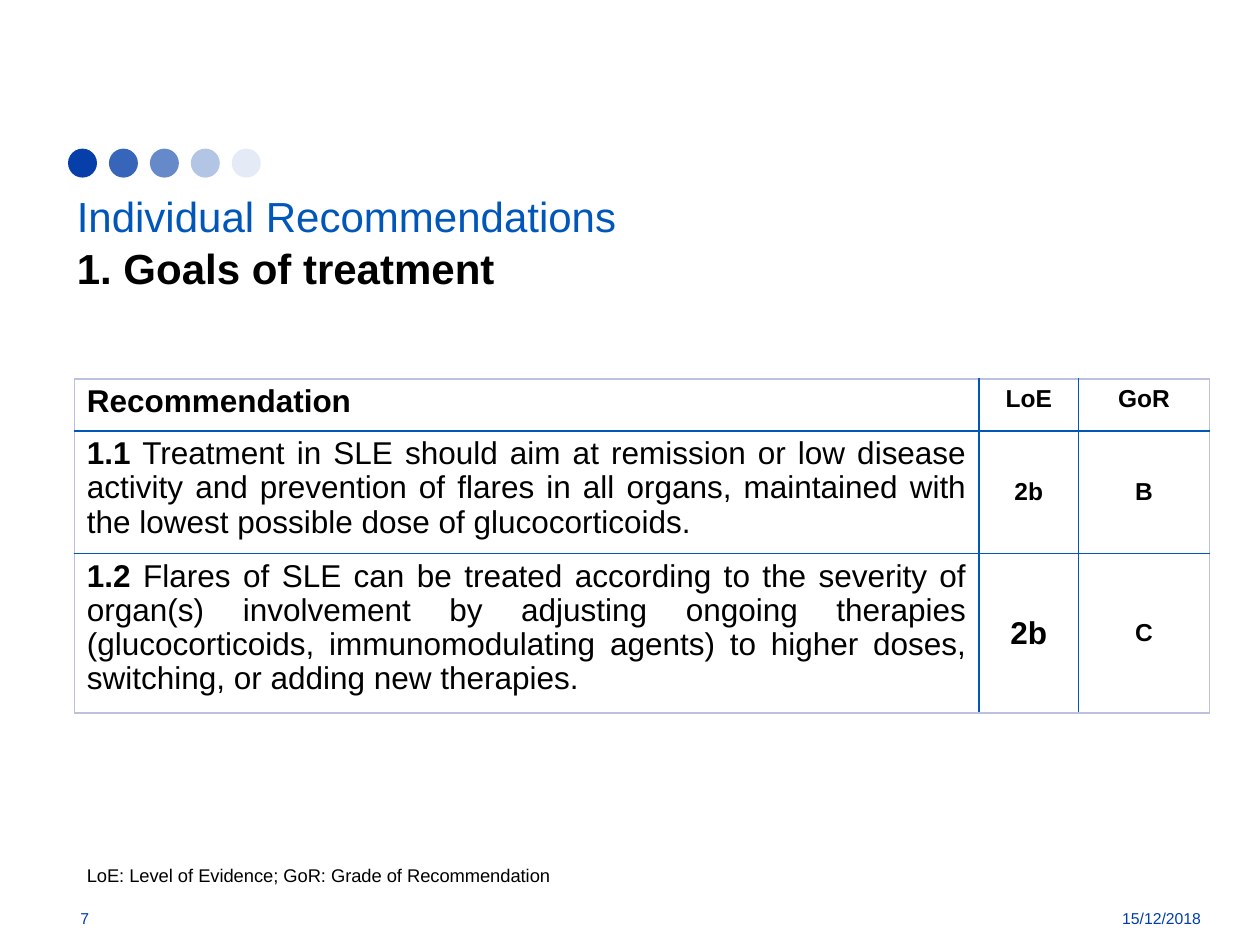
from lxml import etree
from pptx import Presentation
from pptx.dml.color import RGBColor
from pptx.enum.shapes import MSO_SHAPE
from pptx.enum.text import MSO_ANCHOR, PP_ALIGN
from pptx.oxml.ns import qn
from pptx.util import Inches, Pt

OVAL = MSO_SHAPE.OVAL
TOP, MIDDLE = MSO_ANCHOR.TOP, MSO_ANCHOR.MIDDLE
LEFT, CENTER, RIGHT = PP_ALIGN.LEFT, PP_ALIGN.CENTER, PP_ALIGN.RIGHT
JUSTIFY = PP_ALIGN.JUSTIFY

BLACK = RGBColor(0x00, 0x00, 0x00)
DOT_BLUE = RGBColor(0x06, 0x3F, 0xA9)
TITLE_BLUE = RGBColor(0x00, 0x56, 0xB9)
FOOTER_BLUE = RGBColor(0x00, 0x3F, 0xA8)
GRID_BLUE = RGBColor(0x00, 0x57, 0xB8)
EDGE_LAVENDER = RGBColor(0xBC, 0xC1, 0xDE)

FONT = "Arial"
DOT_OPACITIES = [100, 80, 61, 30, 10]
DOT_SIZE, DOT_PITCH = 0.23, 0.325
COLUMN_WIDTHS = [7.18, 0.79, 1.04]
ROW_HEIGHTS = [0.41, 0.94, 1.22]
ROWS = [
    [("Recommendation", ""), ("LoE", 14), ("GoR", 14)],
    [("1.1", " Treatment in SLE should aim at remission or low disease activity "
      "and prevention of flares in all organs, maintained with the lowest "
      "possible dose of glucocorticoids."), ("2b", 14), ("B", 14)],
    [("1.2", " Flares of SLE can be treated according to the severity of organ(s) "
      "involvement by adjusting ongoing therapies (glucocorticoids, "
      "immunomodulating agents) to higher doses, switching, or adding new "
      "therapies."), ("2b", 18), ("C", 14)],
]


def add_span(para, text, size, color=BLACK, bold=False):
    span = para.add_run()
    span.text = text
    span.font.name = FONT
    span.font.size = Pt(size)
    span.font.bold = bold
    span.font.color.rgb = color


def add_text(page, text, left, top, width, height, size, color=BLACK,
             align=LEFT, anchor=TOP, wrap=True):
    box = page.shapes.add_textbox(*map(Inches, (left, top, width, height)))
    frame = box.text_frame
    frame.word_wrap = wrap
    frame.vertical_anchor = anchor
    para = frame.paragraphs[0]
    para.alignment = align
    add_span(para, text, size, color)


def add_dots(page):
    for index, opacity in enumerate(DOT_OPACITIES):
        dot = page.shapes.add_shape(
            OVAL, Inches(0.54 + index * DOT_PITCH), Inches(1.18),
            Inches(DOT_SIZE), Inches(DOT_SIZE))
        dot.shadow.inherit = False
        dot.line.fill.background()
        dot.fill.solid()
        dot.fill.fore_color.rgb = DOT_BLUE
        if opacity < 100:
            color = dot.fill._xPr.find(qn("a:solidFill"))[0]
            etree.SubElement(color, qn("a:alpha"), val=str(opacity * 1000))


def format_title(page):
    title = page.shapes.title
    title.left, title.top = Inches(0.51), Inches(1.42)
    title.width, title.height = Inches(9.11), Inches(0.69)
    frame = title.text_frame
    frame.word_wrap = True
    frame.vertical_anchor = TOP
    frame.margin_top = Inches(0.08)
    para = frame.paragraphs[0]
    para.alignment = LEFT
    para.line_spacing = 1.03
    add_span(para, "Individual Recommendations", 24, TITLE_BLUE)
    para.add_line_break()
    add_span(para, "1. Goals of treatment", 24, bold=True)


def set_borders(cell, colors):
    properties = cell._tc.get_or_add_tcPr()
    for position, (side, color) in enumerate(colors.items()):
        line = etree.Element(qn(f"a:ln{side}"), w=str(Pt(1)))
        fill = etree.SubElement(line, qn("a:solidFill"))
        etree.SubElement(fill, qn("a:srgbClr"), val=str(color))
        properties.insert(position, line)


def fill_cell(cell, row, column, content):
    para = cell.text_frame.paragraphs[0]
    if column == 0:
        label, statement = content
        para.alignment = JUSTIFY
        para.line_spacing = 0.97
        add_span(para, label, 18, bold=True)
        if statement:
            add_span(para, statement, 18)
    else:
        label, size = content
        para.alignment = CENTER
        add_span(para, label, size, bold=True)
        cell.vertical_anchor = MIDDLE if row else TOP


def add_recommendations(page):
    last_row, last_column = len(ROW_HEIGHTS) - 1, len(COLUMN_WIDTHS) - 1
    table = page.shapes.add_table(
        len(ROW_HEIGHTS), len(COLUMN_WIDTHS), Inches(0.59), Inches(3.01),
        Inches(sum(COLUMN_WIDTHS)), Inches(sum(ROW_HEIGHTS))).table
    table.first_row = table.horz_banding = False
    for column, width in enumerate(COLUMN_WIDTHS):
        table.columns[column].width = Inches(width)
    for row, height in enumerate(ROW_HEIGHTS):
        table.rows[row].height = Inches(height)
        for column, content in enumerate(ROWS[row]):
            cell = table.cell(row, column)
            fill_cell(cell, row, column, content)
            cell.fill.background()
            on_edge = {"L": column == 0, "R": column == last_column,
                       "T": row == 0, "B": row == last_row}
            set_borders(cell, {side: EDGE_LAVENDER if edge else GRID_BLUE
                               for side, edge in on_edge.items()})


def main():
    deck = Presentation()
    deck.slide_width, deck.slide_height = Inches(10), Inches(7.5)
    page = deck.slides.add_slide(deck.slide_layouts[5])
    add_dots(page)
    format_title(page)
    add_text(page, "7", 0.54, 7.09, 0.96, 0.4, 9, FOOTER_BLUE, anchor=MIDDLE)
    add_text(page, "15/12/2018", 8.29, 7.09, 1.34, 0.4, 9, FOOTER_BLUE,
             align=RIGHT, anchor=MIDDLE)
    add_recommendations(page)
    add_text(page, "LoE: Level of Evidence; GoR: Grade of Recommendation",
             0.59, 6.81, 3.95, 0.28, 10.5, wrap=False)
    deck.save("out.pptx")


if __name__ == "__main__":
    main()
